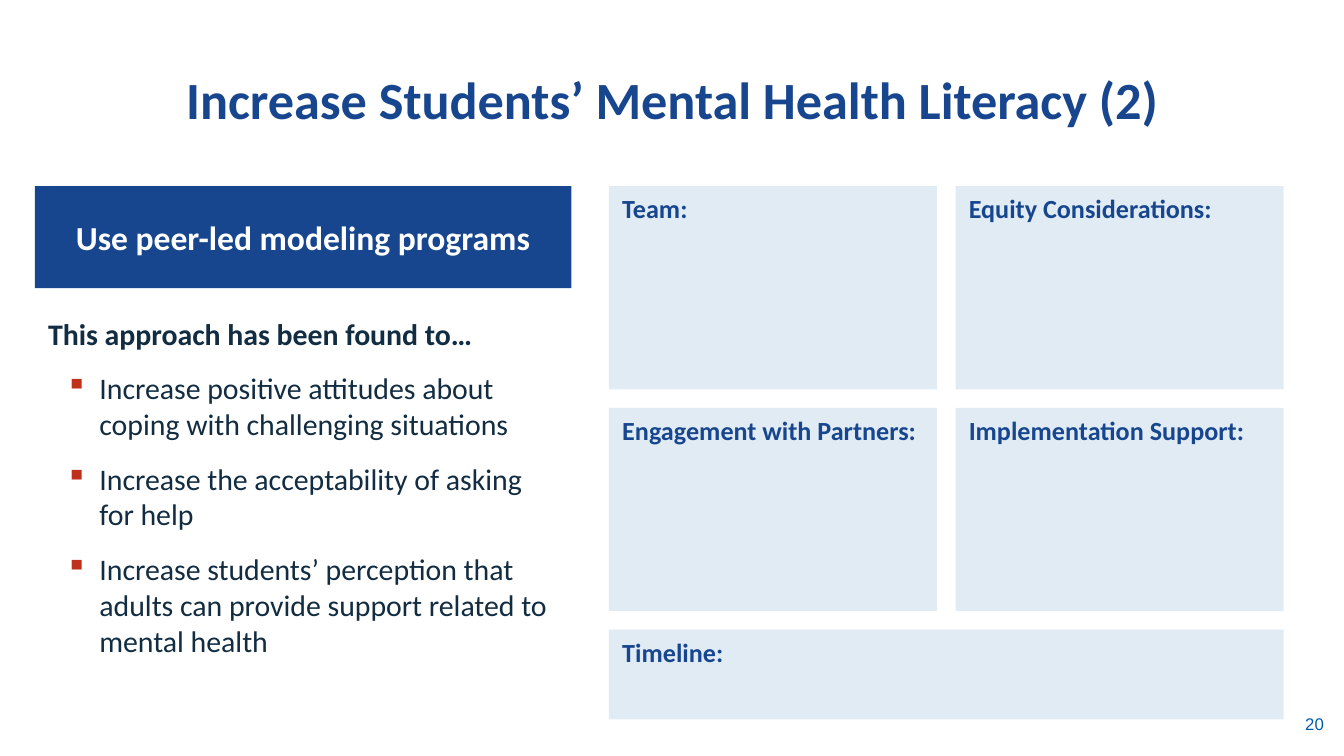
"""Build the peer-led modeling slide on students' mental health literacy."""
from dataclasses import dataclass

from lxml import etree
from pptx import Presentation
from pptx.dml.color import RGBColor
from pptx.enum.shapes import MSO_SHAPE
from pptx.enum.text import MSO_ANCHOR, PP_ALIGN
from pptx.oxml.ns import qn
from pptx.util import Cm, Pt

RECTANGLE = MSO_SHAPE.RECTANGLE
TOP, MIDDLE, BOTTOM = MSO_ANCHOR.TOP, MSO_ANCHOR.MIDDLE, MSO_ANCHOR.BOTTOM
LEFT, CENTER, RIGHT = PP_ALIGN.LEFT, PP_ALIGN.CENTER, PP_ALIGN.RIGHT


@dataclass(frozen=True)
class Theme:
    navy: str = "17468F"
    ink: str = "122C41"
    white: str = "FFFFFF"
    panel: str = "86B2D7"
    panel_alpha: int = 25000
    bullet: str = "BF311B"
    number: str = "015DAA"
    text_font: str = "Calibri"
    number_font: str = "Arial"
    title_size: int = 28
    banner_size: int = 18
    body_size: int = 16
    panel_size: int = 14
    number_size: int = 9


class SlideBuilder:
    def __init__(self, slide, theme):
        self.slide = slide
        self.theme = theme

    def _write(self, paragraph, text, size, color, bold=True, font=None, **layout):
        paragraph.text = text
        for name, value in layout.items():
            setattr(paragraph, name, value)
        formats = {"name": font or self.theme.text_font, "size": Pt(size), "bold": bold}
        for name, value in formats.items():
            setattr(paragraph.font, name, value)
        paragraph.font.color.rgb = RGBColor.from_string(color)

    def _frame(self, shape, anchor):
        frame = shape.text_frame
        for name, value in {"word_wrap": True, "vertical_anchor": anchor}.items():
            setattr(frame, name, value)
        return frame

    def _block(self, box, color, anchor):
        block = self.slide.shapes.add_shape(RECTANGLE, *map(Cm, box))
        block.shadow.inherit = False
        block.fill.solid()
        block.fill.fore_color.rgb = RGBColor.from_string(color)
        block.line.fill.background()
        return block, self._frame(block, anchor).paragraphs[0]

    def title(self, box, text):
        heading = self.slide.shapes.title
        for name, value in zip(("left", "top", "width", "height"), box):
            setattr(heading, name, Cm(value))
        self._write(self._frame(heading, BOTTOM).paragraphs[0], text,
                    self.theme.title_size, self.theme.navy,
                    alignment=CENTER, line_spacing=Pt(30))

    def banner(self, box, text):
        _, paragraph = self._block(box, self.theme.navy, MIDDLE)
        self._write(paragraph, text, self.theme.banner_size, self.theme.white,
                    alignment=CENTER)

    def panel(self, box, label):
        block, paragraph = self._block(box, self.theme.panel, TOP)
        fill_color = block.fill._xPr.find(qn("a:solidFill"))[0]
        etree.SubElement(fill_color, qn("a:alpha"), val=str(self.theme.panel_alpha))
        self._write(paragraph, label, self.theme.panel_size, self.theme.navy,
                    alignment=LEFT)

    def findings(self, box, lead, points):
        frame = self._frame(self.slide.shapes.add_textbox(*map(Cm, box)), TOP)
        self._write(frame.paragraphs[0], lead, self.theme.body_size, self.theme.ink)
        for point in points:
            paragraph = frame.add_paragraph()
            properties = paragraph._p.get_or_add_pPr()
            properties.set("marL", str(Cm(0.97)))
            properties.set("indent", str(-Cm(0.64)))
            bullet_color = etree.SubElement(properties, qn("a:buClr"))
            etree.SubElement(bullet_color, qn("a:srgbClr"), val=self.theme.bullet)
            etree.SubElement(properties, qn("a:buChar"), char="▪")
            self._write(paragraph, point, self.theme.body_size, self.theme.ink,
                        bold=False, space_before=Pt(10))

    def page_number(self, box, number):
        frame = self._frame(self.slide.shapes.add_textbox(*map(Cm, box)), MIDDLE)
        self._write(frame.paragraphs[0], number, self.theme.number_size,
                    self.theme.number, bold=False, font=self.theme.number_font,
                    alignment=RIGHT)


def main():
    deck = Presentation()
    deck.slide_width, deck.slide_height = Cm(25.4), Cm(14.29)
    builder = SlideBuilder(deck.slides.add_slide(deck.slide_layouts[5]), Theme())

    builder.title((1.27, 0.2, 22.86, 2.39), "Increase Students’ Mental Health Literacy (2)")

    column_left, column_width = 0.66, 10.14
    grid_left, grid_top = 11.51, 3.52
    builder.banner((column_left, grid_top, column_width, 1.93),
                   "Use peer-led modeling programs")
    builder.findings(
        (column_left, 5.84, column_width, 6.96),
        "This approach has been found to…",
        ["Increase positive attitudes about coping with challenging situations",
         "Increase the acceptability of asking for help",
         "Increase students’ perception that adults can provide support related to "
         "mental health"])

    panel_width, panel_height, gap = 6.2, 3.84, 0.35
    rows = [("Team:", "Equity Considerations:"),
            ("Engagement with Partners:", "Implementation Support:")]
    for row, labels in enumerate(rows):
        for column, label in enumerate(labels):
            builder.panel((grid_left + column * (panel_width + gap),
                           grid_top + row * (panel_height + gap),
                           panel_width, panel_height), label)
    timeline_top = grid_top + len(rows) * (panel_height + gap)
    builder.panel((grid_left, timeline_top, 2 * panel_width + gap, 1.7), "Timeline:")

    builder.page_number((23.09, 13.31, 2.18, 0.76), "20")
    deck.save("out.pptx")


if __name__ == "__main__":
    main()
